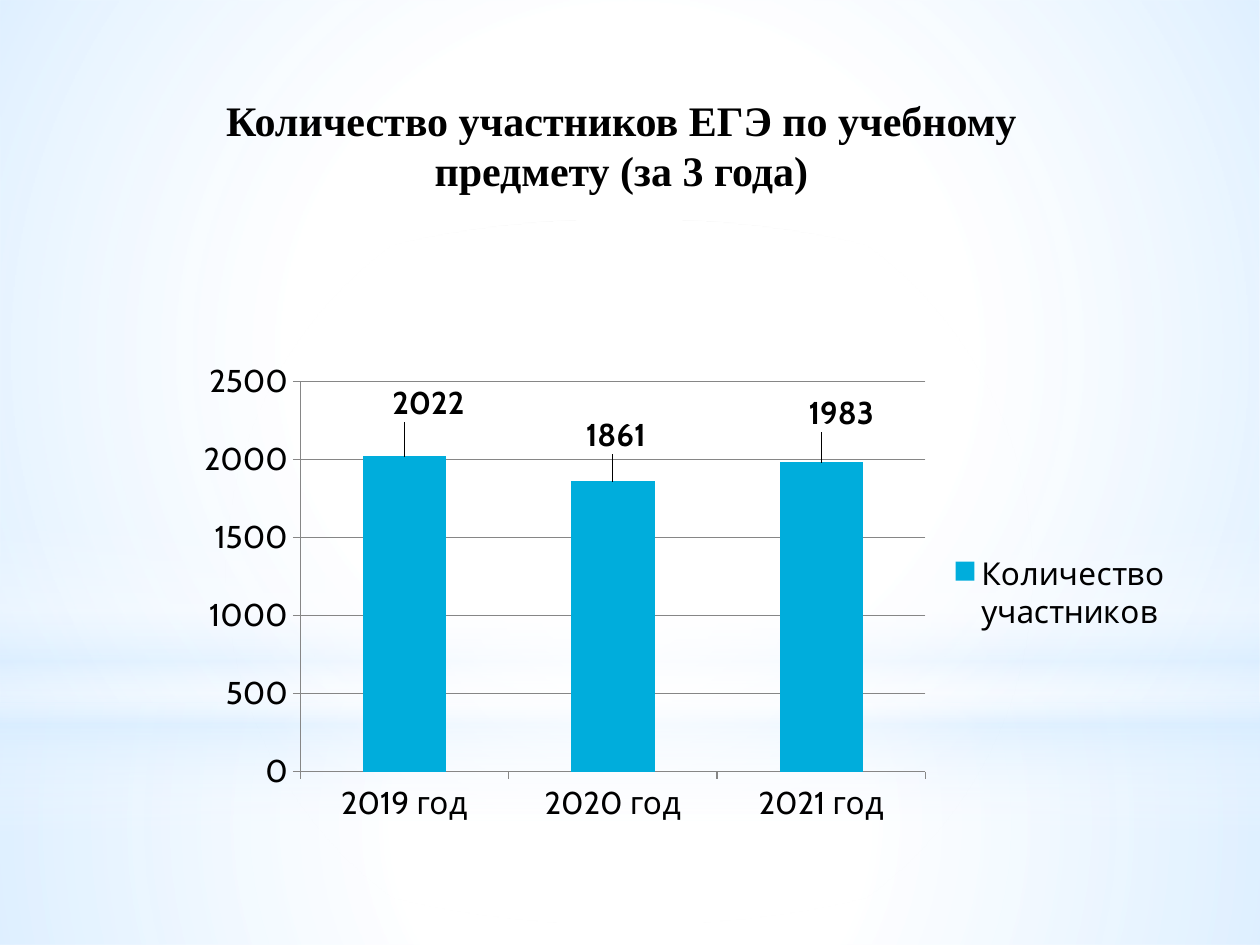
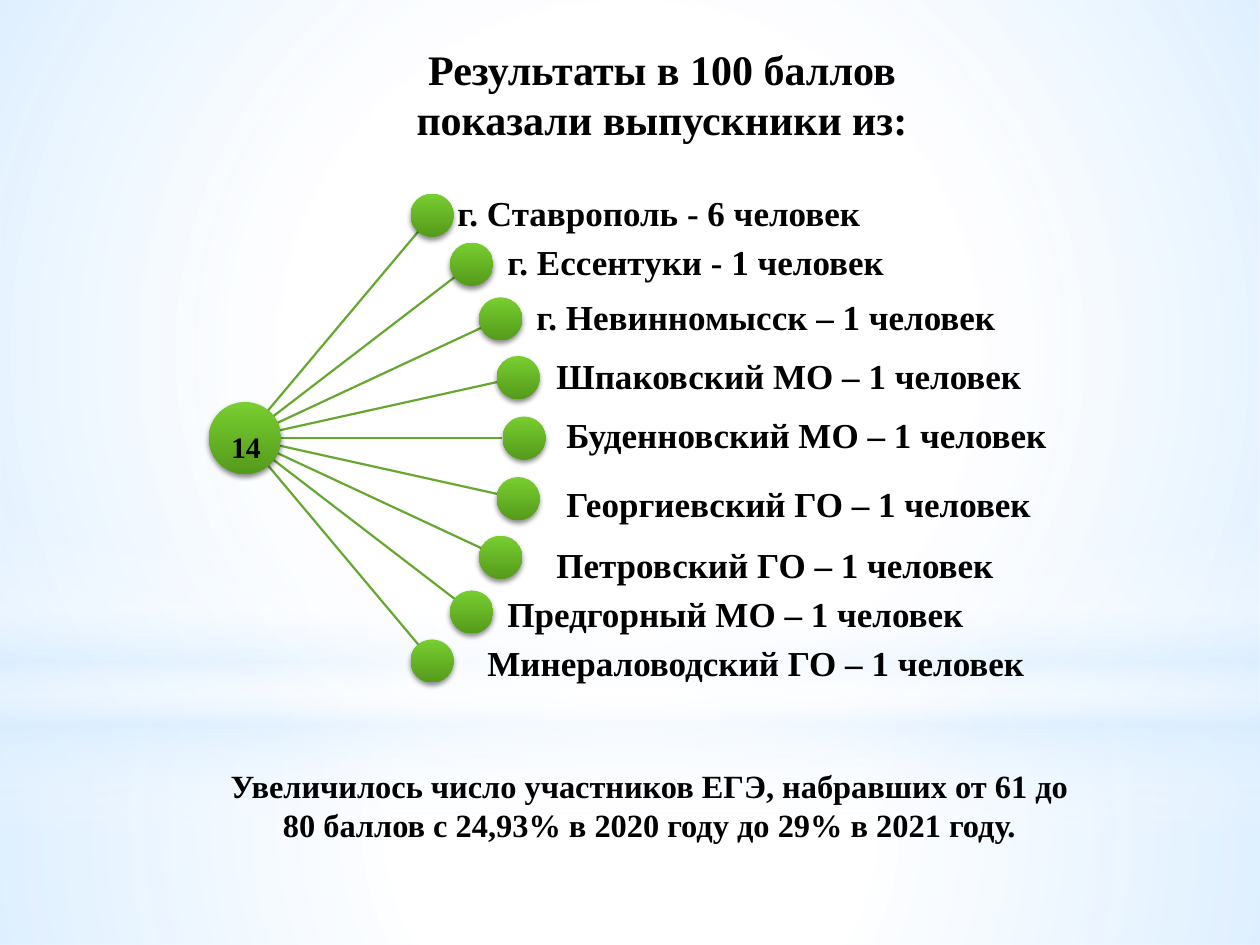
"""Build two slides on exam participation and the origin of top-scoring graduates."""
import math

from lxml import etree
from pptx import Presentation
from pptx import util as u
from pptx.chart.data import CategoryChartData
from pptx.dml.color import RGBColor
from pptx.enum import chart as charts, shapes, text
from pptx.oxml import parse_xml
from pptx.oxml.ns import nsdecls, qn

PX = 914400 / 126
WIDTH, HEIGHT = 1260, 945
SERIF, SANS = "Times New Roman", "Cabin"
BLACK, WHITE, PALE = "000000", "FFFFFF", "D6ECFF"
BAR, GRID, LINE = "00ADDC", "868686", "66A72F"
BALL = [(0, "78CE30", 100), (100, "559B1B", 100)]

BACKDROP = [
    ("RECTANGLE", (0, 703, 1260, 242), [(0, WHITE, 91), (37, WHITE, 76), (100, PALE, 79)], True),
    ("RECTANGLE", (0, 0, 1260, 703), [(0, WHITE, 89), (48, WHITE, 62), (100, PALE, 79)], True),
    ("RECTANGLE", (0, 519, 1260, 315),
     [(0, WHITE, 0), (29, WHITE, 30), (45, PALE, 40), (55, WHITE, 26), (65, PALE, 60),
      (100, WHITE, 0)], False),
    ("OVAL", (0, 220, 1260, 703), [(0, WHITE, 100), (56, WHITE, 0)], True),
]

COUNT_TITLE = ["Количество участников ЕГЭ по учебному предмету (за 3\u00a0года)".replace("\u00a0", " ")]
SERIES = "Количество участников"
COUNTS = {"2019 год": 2022, "2020 год": 1861, "2021 год": 1983}
LABEL_SHIFTS = [(24, -29), (3, -22), (20, -25)]
CHART_AREA = (184, 354, 1002, 479)
PLOT_AREA = (300, 382, 625, 390)

TOP_TITLE = ["Результаты в 100 баллов", "показали выпускники из:"]
TOTAL = "14"
PLACES = [
    ("г. Ставрополь - 6 человек", 382, 185),
    ("г. Ессентуки - 1 человек", 432, 234),
    ("г. Невинномысск – 1 человек", 461, 289),
    ("Шпаковский МО – 1 человек", 481, 348),
    ("Буденновский МО – 1 человек", 491, 407),
    ("Георгиевский ГО – 1 человек", 491, 476),
    ("Петровский ГО – 1 человек", 481, 537),
    ("Предгорный МО – 1 человек", 432, 586),
    ("Минераловодский ГО – 1 человек", 412, 635),
]
SUMMARY = ["Увеличилось число участников ЕГЭ, набравших от 61 до 80 баллов "
           "с 24,93% в 2020 году до 29% в 2021 году."]
HUB = (245, 438)
HUB_RADIUS, DOT_RADIUS = 36, 21.5
STEP_ANGLE = 12.5


def emu(*lengths):
    return [u.Emu(round(length * PX)) for length in lengths]


def colour(value):
    return RGBColor.from_string(value)


def add_gradient_shape(page, kind, area, stops, radial):
    shape = page.shapes.add_shape(getattr(shapes.MSO_SHAPE, kind), *emu(*area))
    shape.shadow.inherit = False
    shape.line.fill.background()
    marks = "".join(
        f'<a:gs pos="{place * 1000}"><a:srgbClr val="{value}">'
        f'<a:alpha val="{opacity * 1000}"/></a:srgbClr></a:gs>'
        for place, value, opacity in stops)
    course = ('<a:path path="circle"><a:fillToRect l="50000" t="50000" r="50000" b="50000"/></a:path>'
              if radial else '<a:lin ang="5400000" scaled="0"/>')
    gradient = parse_xml(f'<a:gradFill {nsdecls("a")} rotWithShape="1">'
                         f'<a:gsLst>{marks}</a:gsLst>{course}</a:gradFill>')
    shape._element.spPr.find(qn("a:prstGeom")).addnext(gradient)
    return shape


def add_ball(page, centre, radius):
    x, y = centre
    ball = add_gradient_shape(page, "OVAL", (x - radius, y - radius, 2 * radius, 2 * radius),
                              BALL, False)
    ball._element.spPr.find(qn("a:effectLst")).append(parse_xml(
        f'<a:outerShdw {nsdecls("a")} blurRad="39000" dist="23000" dir="5400000" rotWithShape="0">'
        f'<a:srgbClr val="{BLACK}"><a:alpha val="45000"/></a:srgbClr></a:outerShdw>'))


def add_text(page, lines, area, size, indent=0, align="CENTER"):
    box = page.shapes.add_textbox(*emu(*area))
    frame = box.text_frame
    frame.word_wrap = True
    for index, line in enumerate(lines):
        para = frame.paragraphs[0] if index == 0 else frame.add_paragraph()
        para.alignment = getattr(text.PP_ALIGN, align)
        para._p.get_or_add_pPr().set("marL", str(emu(indent)[0]))
        span = para.add_run()
        span.text = line
        span.font.name, span.font.size, span.font.bold = SERIF, u.Pt(size), True
        span.font.color.rgb = colour(BLACK)


def add_page(deck):
    page = deck.slides.add_slide(deck.slide_layouts[6])
    page.background.fill.solid()
    page.background.fill.fore_color.rgb = colour(WHITE)
    for layer in BACKDROP:
        add_gradient_shape(page, *layer)
    return page


def manual_layout(**values):
    items = "".join(f'<c:{name} val="{value}"/>' for name, value in values.items())
    return parse_xml(f'<c:layout {nsdecls("c")}><c:manualLayout>{items}</c:manualLayout></c:layout>')


def place_plot(chart):
    left, top, width, height = CHART_AREA
    x, y, w, h = PLOT_AREA
    area = chart._chartSpace.chart.plotArea
    for old in area.findall(qn("c:layout")):
        area.remove(old)
    area.insert(0, manual_layout(
        layoutTarget="inner", xMode="edge", yMode="edge",
        x=round((x - left) / width, 3), y=round((y - top) / height, 3),
        w=round(w / width, 3), h=round(h / height, 3)))


def add_labels(series):
    labels = series.data_labels
    labels.show_value = True
    labels.position = charts.XL_LABEL_POSITION.OUTSIDE_END
    labels.font.name, labels.font.size, labels.font.bold = SANS, u.Pt(18), True
    labels.font.color.rgb = colour(BLACK)
    for index, (dx, dy) in enumerate(LABEL_SHIFTS):
        label = series.points[index].data_label
        label.position = charts.XL_LABEL_POSITION.OUTSIDE_END
        font = label.font
        font.name, font.size, font.bold = SANS, u.Pt(18), True
        font.color.rgb = colour(BLACK)
        element = labels._element.findall(qn("c:dLbl"))[index]
        element.find(qn("c:idx")).addnext(manual_layout(
            x=round(dx / CHART_AREA[2], 3), y=round(dy / CHART_AREA[3], 3)))


def add_count_chart(page):
    data = CategoryChartData()
    data.categories = list(COUNTS)
    data.add_series(SERIES, list(COUNTS.values()))
    chart = page.shapes.add_chart(charts.XL_CHART_TYPE.COLUMN_CLUSTERED,
                                  *emu(*CHART_AREA), data).chart
    chart.font.name, chart.font.size = SANS, u.Pt(18)
    chart.font.color.rgb = colour(BLACK)
    chart.has_title = False
    chart.has_legend = True
    chart.legend.position = charts.XL_LEGEND_POSITION.RIGHT
    chart.legend.include_in_layout = False
    values = chart.value_axis
    values.minimum_scale, values.maximum_scale, values.major_unit = 0, 2500, 500
    values.has_major_gridlines = True
    for axis in (chart.category_axis, values):
        axis.major_tick_mark = charts.XL_TICK_MARK.OUTSIDE
    for part in (chart.category_axis, values, values.major_gridlines):
        part.format.line.color.rgb = colour(GRID)
        part.format.line.width = u.Pt(0.75)
    plot = chart.plots[0]
    plot.gap_width = 150
    plot.vary_by_categories = False
    series = plot.series[0]
    series.format.fill.solid()
    series.format.fill.fore_color.rgb = colour(BAR)
    add_labels(series)
    place_plot(chart)


def around_hub(distance, angle):
    return (HUB[0] + distance * math.cos(angle), HUB[1] + distance * math.sin(angle))


def add_fan(page):
    middle = len(PLACES) // 2
    rays = [(279 + 0.75 * step ** 2, math.radians(STEP_ANGLE * step))
            for step in range(-middle, middle + 1)]
    for distance, angle in rays:
        ends = around_hub(25, angle) + around_hub(distance - DOT_RADIUS, angle)
        ray = page.shapes.add_connector(shapes.MSO_CONNECTOR.STRAIGHT, *emu(*ends))
        ray.line.color.rgb = colour(LINE)
        ray.line.width = u.Pt(1.25)
        etree.SubElement(ray._element.spPr, qn("a:effectLst"))
    add_ball(page, HUB, HUB_RADIUS)
    for ray in rays:
        add_ball(page, around_hub(*ray), DOT_RADIUS)


def main():
    deck = Presentation()
    deck.slide_width, deck.slide_height = emu(WIDTH, HEIGHT)

    page = add_page(deck)
    add_text(page, COUNT_TITLE, (173, 88, 897, 155), 24)
    add_count_chart(page)

    page = add_page(deck)
    add_fan(page)
    add_text(page, SUMMARY, (205, 760, 882, 110), 18.5, indent=6)
    add_text(page, TOP_TITLE, (154, 37, 953, 115), 24, indent=63)
    for place, left, top in PLACES:
        add_text(page, [place], (left, top, WIDTH - left, 55), 20, indent=63, align="LEFT")
    add_text(page, [TOTAL], (204, 423, 78, 47), 17, indent=6)
    deck.save("out.pptx")


if __name__ == "__main__":
    main()
